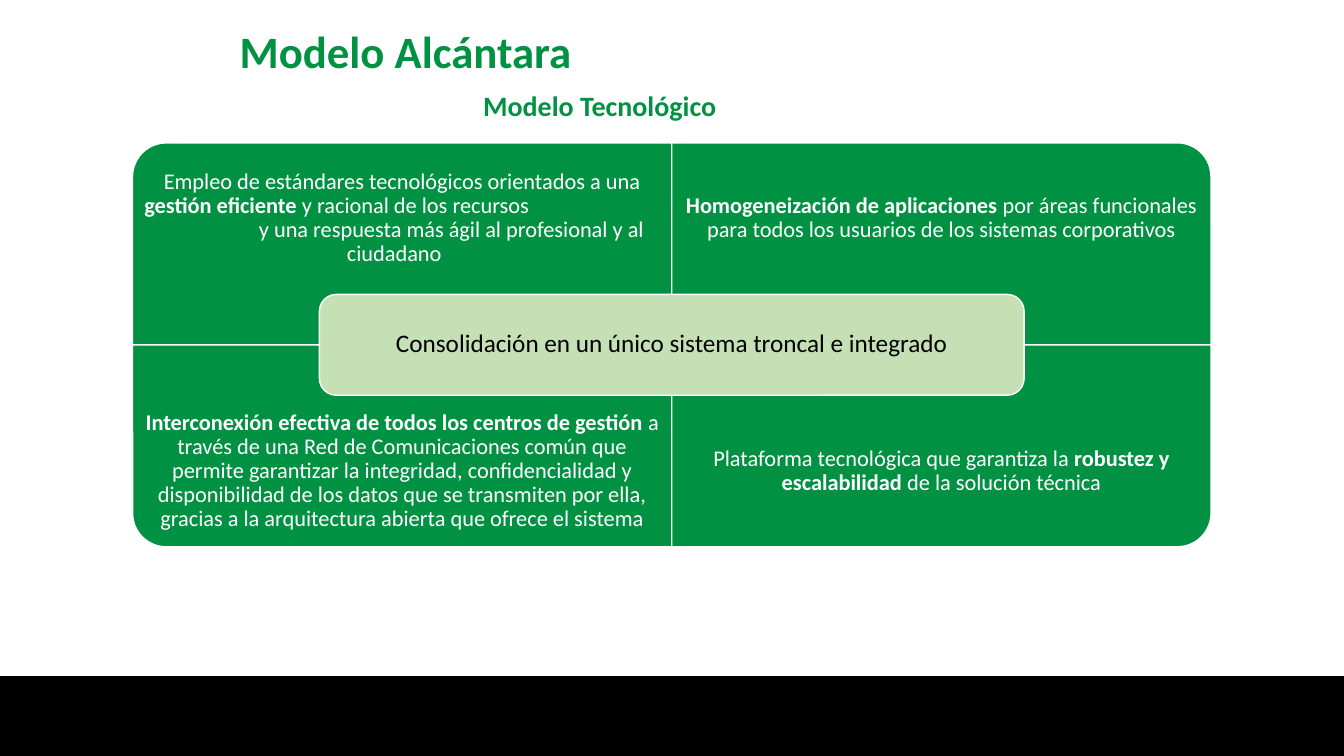
from pptx import Presentation
from pptx.dml.color import RGBColor
from pptx.enum.shapes import MSO_SHAPE
from pptx.enum.text import MSO_ANCHOR, PP_ALIGN
from pptx.util import Cm, Pt

RECTANGLE = MSO_SHAPE.RECTANGLE
ONE_ROUND_CORNER = MSO_SHAPE.ROUND_1_RECTANGLE
ROUNDED = MSO_SHAPE.ROUNDED_RECTANGLE
LEFT, CENTER, RIGHT = PP_ALIGN.LEFT, PP_ALIGN.CENTER, PP_ALIGN.RIGHT
MIDDLE, BOTTOM = MSO_ANCHOR.MIDDLE, MSO_ANCHOR.BOTTOM

COLORS = {"green": "009242", "light": "C5E0B4", "white": "FFFFFF", "black": "000000"}

presentation = Presentation()
presentation.slide_width = Cm(33.87)
presentation.slide_height = Cm(19.05)
slide = presentation.slides.add_slide(presentation.slide_layouts[6])


def add_box(kind, left, top, width, height, fill, line=None):
    shape = slide.shapes.add_shape(kind, Cm(left), Cm(top), Cm(width), Cm(height))
    shape.shadow.inherit = False
    shape.fill.solid()
    shape.fill.fore_color.rgb = RGBColor.from_string(COLORS[fill])
    if line:
        shape.line.color.rgb = RGBColor.from_string(COLORS[line])
        shape.line.width = Pt(1)
    else:
        shape.line.fill.background()
    return shape


def write(shape, text, size=16, color="white", aligns=(CENTER,), anchor=MIDDLE,
          inset_x=0.3, inset_y=0.3):
    """One paragraph per line of text; ** switches bold on and off."""
    frame = shape.text_frame
    frame.word_wrap = True
    frame.vertical_anchor = anchor
    frame.margin_left = frame.margin_right = Cm(inset_x)
    frame.margin_top = frame.margin_bottom = Cm(inset_y)
    for index, (line, align) in enumerate(zip(text.split("\n"), aligns)):
        paragraph = frame.add_paragraph() if index else frame.paragraphs[0]
        paragraph.alignment = align
        paragraph.line_spacing = 0.9
        for part, words in enumerate(line.split("**")):
            if words:
                run = paragraph.add_run()
                run.text = words
                run.font.name = "Calibri"
                run.font.size = Pt(size)
                run.font.bold = part % 2 == 1
                run.font.color.rgb = RGBColor.from_string(COLORS[color])


# Footer band
add_box(RECTANGLE, 0, 17.04, 33.87, 2.01, "black")

# Four panels around the centre, each with its outer corner rounded
CENTER_X, CENTER_Y = 16.93, 8.69
PANEL_WIDTH, PANEL_HEIGHT, TEXT_HEIGHT = 13.59, 5.09, 3.81
panels = [
    (0, 0, 270,
     "Empleo de estándares tecnológicos orientados a una\n"
     "**gestión eficiente** y racional de los recursos\n"
     "y una respuesta más ágil al profesional y al\n"
     "ciudadano", (CENTER, LEFT, RIGHT, CENTER)),
    (0, 1, 0,
     "**Homogeneización de aplicaciones** por áreas funcionales para todos "
     "los usuarios de los sistemas corporativos", (CENTER,)),
    (1, 0, 180,
     "**Interconexión efectiva de todos los centros de gestión** a través de una Red "
     "de Comunicaciones común que permite garantizar la integridad, confidencialidad "
     "y disponibilidad de los datos que se transmiten por ella, gracias a la "
     "arquitectura abierta que ofrece el sistema", (CENTER,)),
    (1, 1, 90,
     "Plataforma tecnológica que garantiza la **robustez y escalabilidad** "
     "de la solución técnica", (CENTER,)),
]
for row, column, rotation, text, aligns in panels:
    left = CENTER_X + (column - 1) * PANEL_WIDTH
    top = CENTER_Y + (row - 1) * PANEL_HEIGHT
    # A quarter turn swaps the sides about the panel's middle
    width, height = PANEL_WIDTH, PANEL_HEIGHT
    if rotation % 180:
        width, height = height, width
    panel = add_box(ONE_ROUND_CORNER, left + (PANEL_WIDTH - width) / 2,
                    top + (PANEL_HEIGHT - height) / 2, width, height, "green", "white")
    panel.rotation = rotation
    text_top = top + row * (PANEL_HEIGHT - TEXT_HEIGHT)
    label = slide.shapes.add_textbox(Cm(left), Cm(text_top), Cm(PANEL_WIDTH), Cm(TEXT_HEIGHT))
    write(label, text, aligns=aligns)
    if RIGHT in aligns:
        indented = label.text_frame.paragraphs[aligns.index(RIGHT)]
        indented._p.get_or_add_pPr().set("marR", str(Cm(0.4)))

# Central box
core = add_box(ROUNDED, CENTER_X - 8.88, CENTER_Y - 1.27, 17.76, 2.54, "light", "white")
write(core, "Consolidación en un único sistema troncal e integrado", size=18, color="black")

# Title and subtitle
headings = [
    ("**Modelo Alcántara**", 5.79, 0.86, 12.42, 1.25, 32, LEFT),
    ("**Modelo Tecnológico**", 7.24, 1.96, 15.75, 1.27, 20, CENTER),
]
for text, left, top, width, height, size, align in headings:
    heading = slide.shapes.add_textbox(Cm(left), Cm(top), Cm(width), Cm(height))
    write(heading, text, size=size, color="green", aligns=(align,), anchor=BOTTOM,
          inset_x=0.25, inset_y=0.13)

presentation.save("out.pptx")
